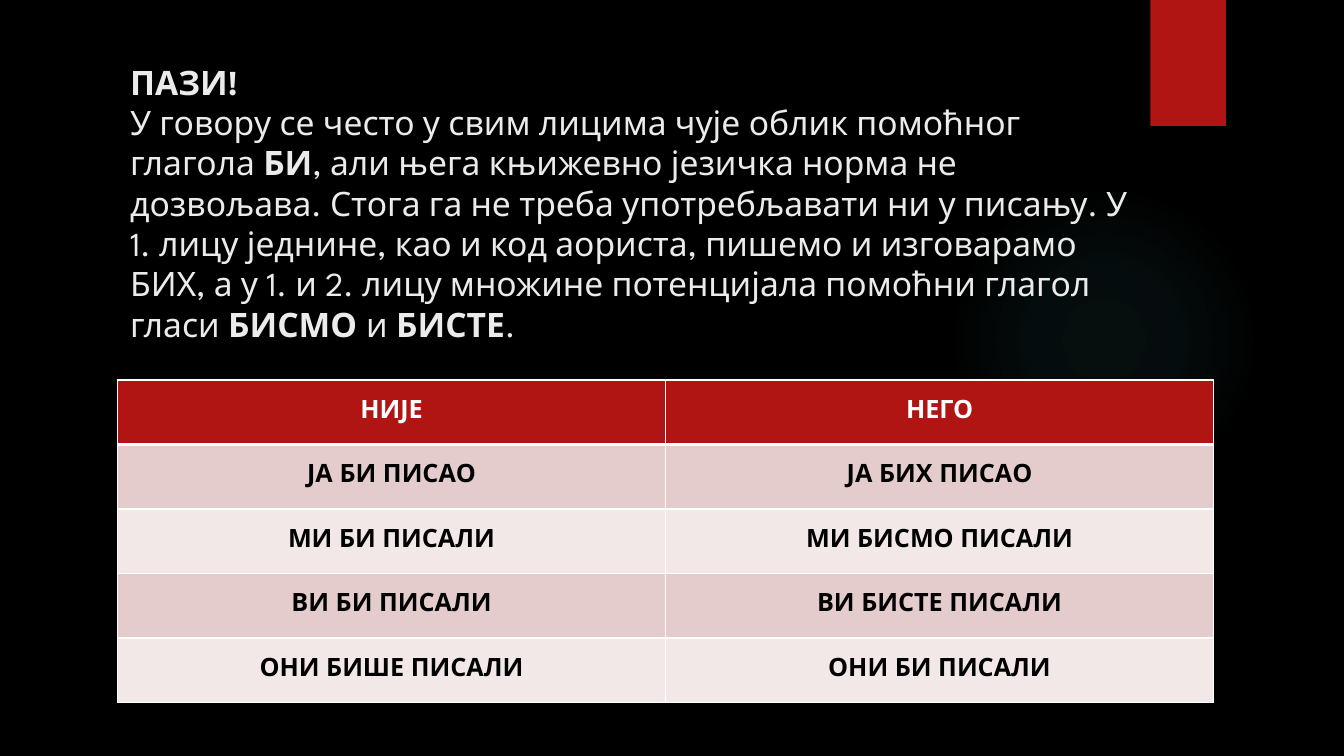
import pptx
import pptx.dml.color
import pptx.enum.shapes
import pptx.enum.text
import pptx.oxml
import pptx.util

DRAWING_NS = 'xmlns:a="http://schemas.openxmlformats.org/drawingml/2006/main"'
WHITE, BLACK, RED, OFF_WHITE = "FFFFFF", "000000", "B01513", "EBEBEB"
BANDS = ("E4CCCC", "F2E8E7")
GLOW_STOPS = ((0, 7), (36, 6), (69, 0))

WARNING = (
    ("ПАЗИ!", True),
    None,
    ("У говору се често у свим лицима чује облик помоћног глагола ", False),
    ("БИ", True),
    (", али њега књижевно језичка норма не дозвољава. Стога га не треба "
     "употребљавати ни у писању. У 1. лицу једнине, као и код аориста, "
     "пишемо и изговарамо БИХ, а у 1. и 2. лицу множине потенцијала "
     "помоћни глагол гласи ", False),
    ("БИСМО ", True),
    ("и ", False),
    ("БИСТЕ", True),
    (".", False),
)
VERB_FORMS = (
    ("НИЈЕ", "НЕГО"),
    ("ЈА БИ ПИСАО", "ЈА БИХ ПИСАО"),
    ("МИ БИ ПИСАЛИ", "МИ БИСМО ПИСАЛИ"),
    ("ВИ БИ ПИСАЛИ", "ВИ БИСТЕ ПИСАЛИ"),
    ("ОНИ БИШЕ ПИСАЛИ", "ОНИ БИ ПИСАЛИ"),
)


def rgb(hex_code):
    return pptx.dml.color.RGBColor.from_string(hex_code)


def xml(markup):
    return pptx.oxml.parse_xml(markup.replace(">", f" {DRAWING_NS}>", 1))


class GrammarSlide:
    """Draws on one slide, with lengths as percentages of its size."""

    font_name = "League Spartan"

    def __init__(self, deck):
        self.deck = deck
        self.slide = deck.slides.add_slide(deck.slide_layouts[5])
        self.slide.background.fill.solid()
        self.slide.background.fill.fore_color.rgb = rgb(BLACK)

    def place(self, left, top, width, height):
        across, down = self.deck.slide_width / 100, self.deck.slide_height / 100
        return [round(length) for length in
                (left * across, top * down, width * across, height * down)]

    def shape(self, kind, box, color):
        drawn = self.slide.shapes.add_shape(kind, *self.place(*box))
        drawn.shadow.inherit = False
        drawn.line.fill.background()
        drawn.fill.solid()
        drawn.fill.fore_color.rgb = rgb(color)
        return drawn

    def glow(self, box, color):
        halo = self.shape(pptx.enum.shapes.MSO_SHAPE.OVAL, box, color)
        stops = "".join(
            f'<a:gs pos="{pos * 1000}"><a:srgbClr val="{color}">'
            f'<a:alpha val="{alpha * 1000}"/></a:srgbClr></a:gs>'
            for pos, alpha in GLOW_STOPS)
        gradient = xml(
            f'<a:gradFill><a:gsLst>{stops}</a:gsLst><a:path path="circle">'
            '<a:fillToRect l="50000" t="50000" r="50000" b="50000"/>'
            '</a:path></a:gradFill>')
        properties = halo._element.spPr
        properties.replace(properties.find(pptx.oxml.ns.qn("a:solidFill")), gradient)

    def ribbon(self, box, color):
        band = self.shape(pptx.enum.shapes.MSO_SHAPE.RECTANGLE, box, color)
        effects = band._element.spPr.find(pptx.oxml.ns.qn("a:effectLst"))
        effects.append(xml(
            '<a:outerShdw blurRad="38100" dist="25400" dir="5400000">'
            f'<a:srgbClr val="{BLACK}"><a:alpha val="45000"/></a:srgbClr>'
            '</a:outerShdw>'))

    def run(self, paragraph, words, size, color, bold):
        piece = paragraph.add_run()
        piece.text = words
        piece.font.name = self.font_name
        piece.font.size = pptx.util.Pt(size)
        piece.font.bold = bold
        piece.font.color.rgb = rgb(color)

    def title(self, box, pieces):
        heading = self.slide.shapes.title
        heading.left, heading.top, heading.width, heading.height = self.place(*box)
        heading._element.getparent().append(heading._element)
        frame = heading.text_frame
        frame.word_wrap = True
        frame.auto_size = pptx.enum.text.MSO_AUTO_SIZE.NONE
        frame.vertical_anchor = pptx.enum.text.MSO_ANCHOR.MIDDLE
        paragraph = frame.paragraphs[0]
        paragraph.alignment = pptx.enum.text.PP_ALIGN.LEFT
        paragraph.space_before = pptx.util.Pt(0)
        paragraph.line_spacing = pptx.util.Pt(28.8)
        for piece in pieces:
            if piece is None:
                paragraph.add_line_break()
            else:
                words, bold = piece
                self.run(paragraph, words, 24, OFF_WHITE, bold)

    def borders(self, cell, top, bottom):
        for side, points in (("L", 1), ("R", 1), ("T", top), ("B", bottom)):
            cell._tc.get_or_add_tcPr().append(xml(
                f'<a:ln{side} w="{points * 12700}"><a:solidFill>'
                f'<a:srgbClr val="{WHITE}"/></a:solidFill></a:ln{side}>'))

    def table(self, box, rows):
        grid = self.slide.shapes.add_table(
            len(rows), len(rows[0]), *self.place(*box)).table
        grid.horz_banding = False
        for row, forms in enumerate(rows):
            header = row == 0
            for column, form in enumerate(forms):
                cell = grid.cell(row, column)
                self.borders(cell, 3 if row == 1 else 1, 3 if header else 1)
                cell.fill.solid()
                cell.fill.fore_color.rgb = rgb(
                    RED if header else BANDS[(row - 1) % 2])
                cell.vertical_anchor = pptx.enum.text.MSO_ANCHOR.MIDDLE
                paragraph = cell.text_frame.paragraphs[0]
                paragraph.alignment = pptx.enum.text.PP_ALIGN.CENTER
                self.run(paragraph, form, 18, WHITE if header else BLACK, True)


def main():
    deck = pptx.Presentation()
    deck.slide_width = pptx.util.Inches(13.33)
    deck.slide_height = pptx.util.Inches(7.5)
    lesson = GrammarSlide(deck)
    lesson.glow((70.58, 24.4, 23.1, 41.07), "50B9C1")
    lesson.ribbon((85.6, 0, 5.62, 16.67), RED)
    lesson.title((8.93, 6.8, 75.83, 40), WARNING)
    lesson.table((8.75, 50.27, 81.55, 42.67), VERB_FORMS)
    deck.save("out.pptx")


if __name__ == "__main__":
    main()
